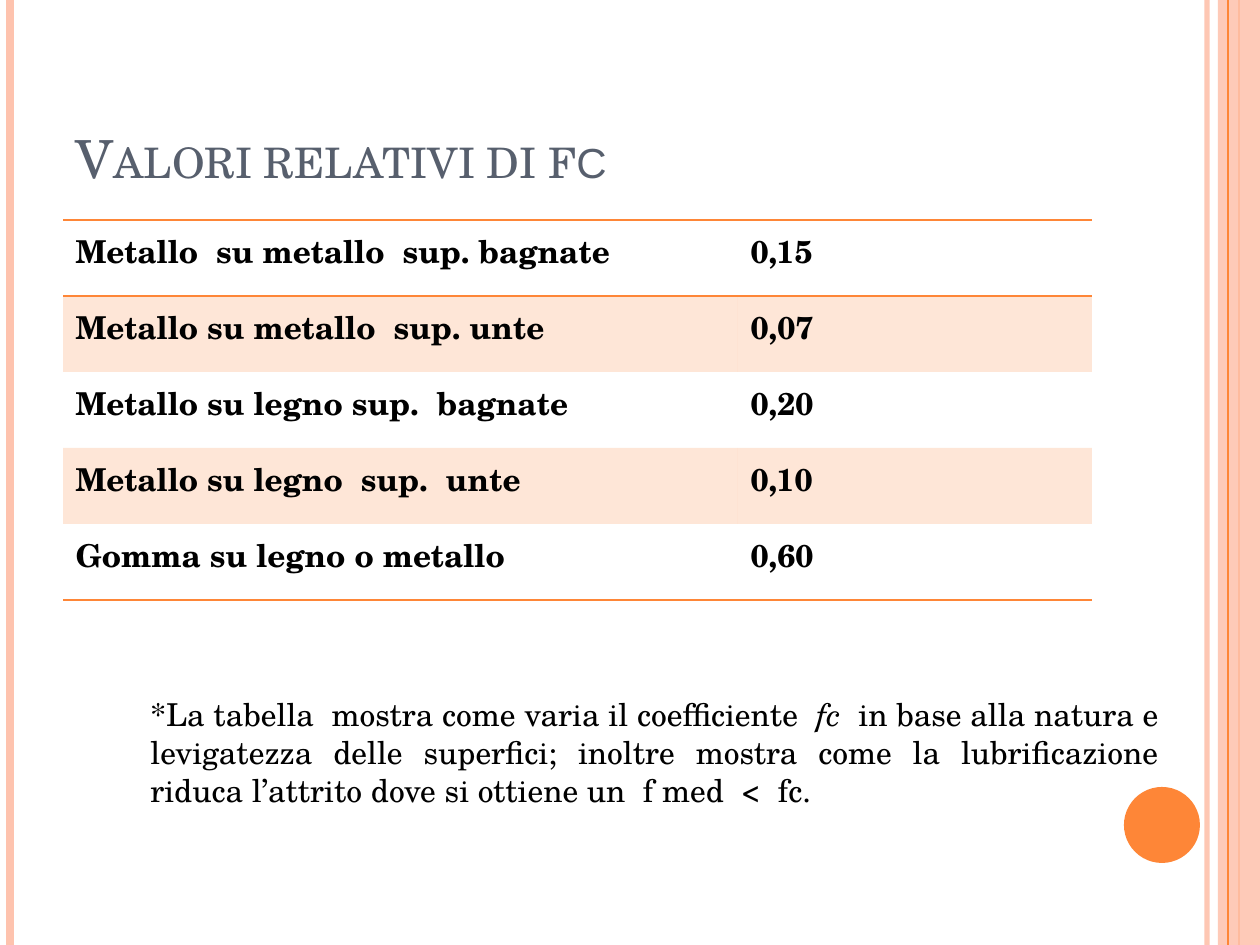
from lxml.etree import SubElement
from pptx import Presentation
from pptx.dml.color import RGBColor
from pptx.enum.shapes import MSO_CONNECTOR as CONNECTOR, MSO_SHAPE as SHAPE
from pptx.enum.text import MSO_ANCHOR as ANCHOR, MSO_AUTO_SIZE as AUTO_SIZE, PP_ALIGN as ALIGN
from pptx.oxml import parse_xml
from pptx.oxml.ns import nsdecls, qn
from pptx.util import Emu, Pt

SCALE = 914400 / 126
ORANGE, PEACH, SLATE, BLACK = "FE8637", "FEC3AE", "575F6D", "000000"
SERIF = "TeX Gyre Schola"
NO_STYLE = "{2D5ABB26-0587-4C30-8999-92F81FD0307C}"


def px(*lengths):
    return [Emu(round(length * SCALE)) for length in lengths]


def paint(fill, color, opacity=100):
    """Make a fill solid and give it an opacity in percent."""
    fill.solid()
    fill.fore_color.rgb = RGBColor.from_string(color)
    if opacity < 100:
        color_node = fill._xPr.find(qn("a:solidFill"))[0]
        SubElement(color_node, qn("a:alpha"), val=str(opacity * 1000))


deck = Presentation()
deck.slide_width, deck.slide_height = px(1260, 945)
page = deck.slides.add_slide(deck.slide_layouts[5])

# Side stripes, from back to front; None marks the place of the wide band
stripes = [(1207, PEACH, 3, 93), (10, PEACH, 4.5, 100), (1239, ORANGE, 1.5, 100),
           None, (1228, ORANGE, 0.75, 100)]
for stripe in stripes:
    if stripe is None:
        band = page.shapes.add_shape(SHAPE.RECTANGLE, *px(1218, 0, 42, 945))
        band.shadow.inherit = False
        band.line.fill.background()
        paint(band.fill, PEACH, 87)
        continue
    x, color, width, opacity = stripe
    line = page.shapes.add_connector(CONNECTOR.STRAIGHT, *px(x, 0, x, 945))
    line.line.width = Pt(width)
    paint(line.line.fill, color, opacity)
    SubElement(line._element.spPr, qn("a:effectLst"))

disc = page.shapes.add_shape(SHAPE.OVAL, *px(1124, 787, 76, 76))
disc.shadow.inherit = False
disc.line.fill.background()
paint(disc.fill, ORANGE)

# Title in small caps
title = page.shapes.title
title.left, title.top, title.width, title.height = px(63, 38, 1029, 157)
frame = title.text_frame
frame.auto_size = AUTO_SIZE.NONE
frame.vertical_anchor = ANCHOR.BOTTOM
para = frame.paragraphs[0]
para.alignment = ALIGN.LEFT
for text, font in [("Valori relativi di f", SERIF), ("c", "Arial")]:
    span = para.add_run()
    span.text = text
    span.font.name, span.font.size = font, Pt(30)
    span.font.color.rgb = RGBColor.from_string(SLATE)
    span.font._element.set("cap", "small")

# Friction coefficients
rows = [
    ("Metallo  su metallo  sup. bagnate", "0,15"),
    ("Metallo su metallo  sup. unte", "0,07"),
    ("Metallo su legno sup.  bagnate", "0,20"),
    ("Metallo su legno  sup.  unte", "0,10"),
    ("Gomma su legno o metallo", "0,60"),
]
borders = {0: ("lnT", "lnB"), len(rows) - 1: ("lnB",)}
table = page.shapes.add_table(len(rows), 2, *px(63, 220, 1029, 380)).table
table.first_row = table.horz_banding = False
table._tbl.tblPr.find(qn("a:tableStyleId")).text = NO_STYLE
for column, width in zip(table.columns, px(675, 354)):
    column.width = width
for r, values in enumerate(rows):
    table.rows[r].height = px(76)[0]
    for c, text in enumerate(values):
        cell = table.cell(r, c)
        cell.text = text
        span = cell.text_frame.paragraphs[0].runs[0]
        span.font.name, span.font.size, span.font.bold = SERIF, Pt(18), True
        span.font.color.rgb = RGBColor.from_string(BLACK)
        if r % 2:
            paint(cell.fill, ORANGE, 20)
        else:
            cell.fill.background()
        for place, side in enumerate(borders.get(r, ())):
            cell._tc.tcPr.insert(place, parse_xml(
                f'<a:{side} {nsdecls("a")} w="12700"><a:solidFill>'
                f'<a:srgbClr val="{ORANGE}"/></a:solidFill></a:{side}>'))

# Note under the table
note = page.shapes.add_textbox(*px(138, 689, 1033, 127))
frame = note.text_frame
frame.word_wrap = True
frame.auto_size = AUTO_SIZE.SHAPE_TO_FIT_TEXT
para = frame.paragraphs[0]
para.alignment = ALIGN.JUSTIFY
for text, italic in [
    ("*La tabella  mostra come varia il coefficiente  ", False),
    ("fc", True),
    ("  in base alla natura e levigatezza delle superfici; inoltre mostra come la "
     "lubrificazione riduca l’attrito dove si ottiene un  f med  <  fc.", False),
]:
    span = para.add_run()
    span.text = text
    span.font.name, span.font.size, span.font.italic = SERIF, Pt(18), italic
    span.font.color.rgb = RGBColor.from_string(BLACK)

deck.save("out.pptx")
